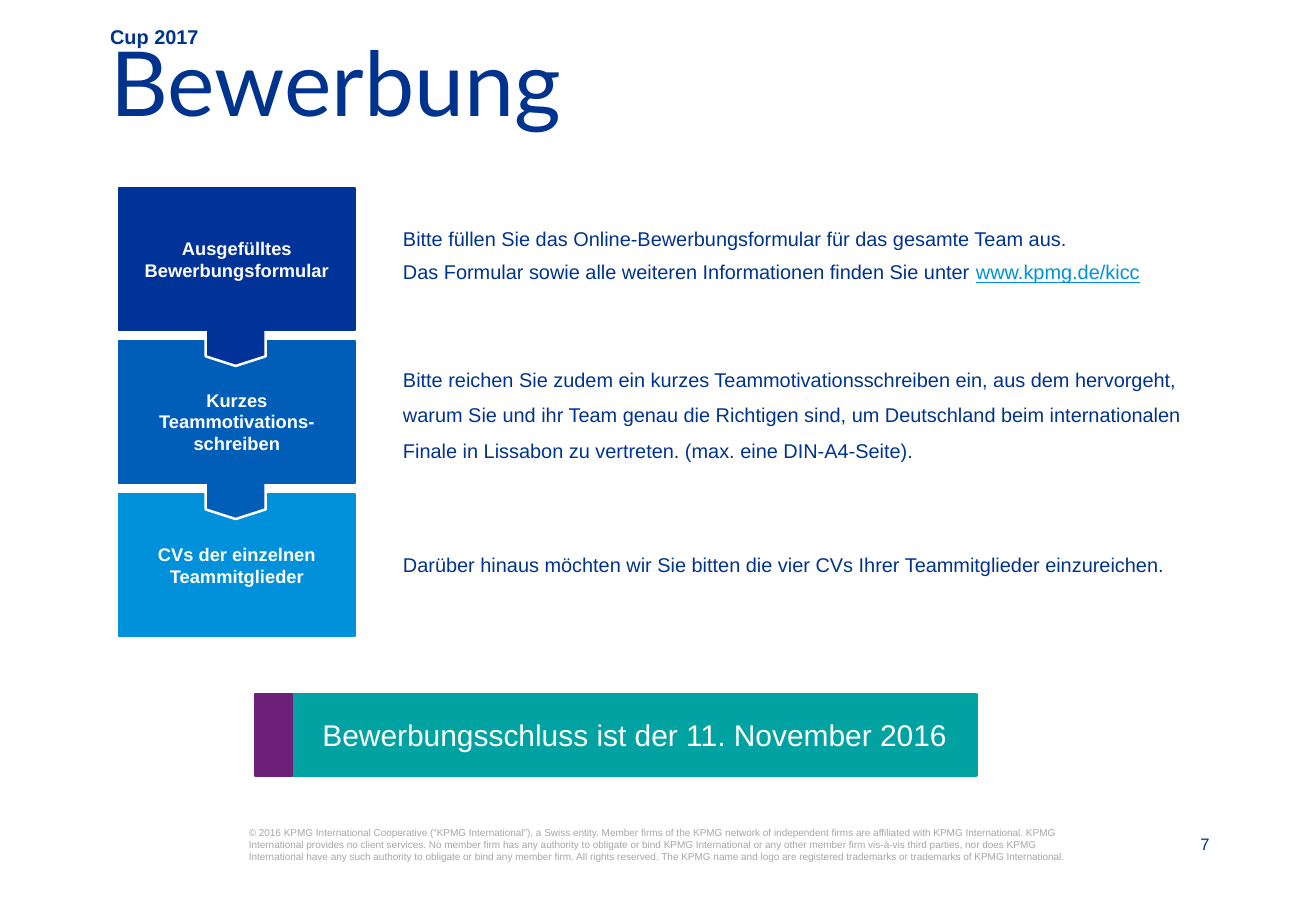
from pptx import Presentation
from pptx.dml.color import RGBColor
from pptx.enum import shapes, text
from pptx.util import Inches, Pt

NAVY, SKY, TEAL, PURPLE, GREY, WHITE = (
    "00338D", "0091DA", "00A3A1", "6D2077", "A6A6A6", "FFFFFF")
MIDDLE, BOTTOM = text.MSO_ANCHOR.MIDDLE, text.MSO_ANCHOR.BOTTOM
CENTER, RIGHT = text.PP_ALIGN.CENTER, text.PP_ALIGN.RIGHT

STEPS = [
    ("003397", ["Ausgefülltes", "Bewerbungsformular"], 0.05),
    ("005EB8", ["Kurzes Teammotivations-schreiben"], 0.21),
    (SKY, ["CVs der einzelnen Teammitglieder"], 0.05),
]
# Top of the box, line spacing, paragraphs
EXPLANATIONS = [
    (1.57, 0.85, [
        "Bitte füllen Sie das Online-Bewerbungsformular für das gesamte Team aus.",
        "Das Formular sowie alle weiteren Informationen finden Sie unter "]),
    (2.84, 1.5, [
        "Bitte reichen Sie zudem ein kurzes Teammotivationsschreiben ein, aus dem "
        "hervorgeht, warum Sie und ihr Team genau die Richtigen sind, um Deutschland "
        "beim internationalen Finale in Lissabon zu vertreten. (max. eine DIN-A4-Seite)."]),
    (4.16, 0.85, [
        "Darüber hinaus möchten wir Sie bitten die vier CVs Ihrer Teammitglieder "
        "einzureichen."]),
]
COPYRIGHT = (
    "© 2016 KPMG International Cooperative (“KPMG International”), a Swiss entity. "
    "Member firms of the KPMG network of independent firms are affiliated with KPMG "
    "International. KPMG International provides no client services. No member firm has "
    "any authority to obligate or bind KPMG International or any other member firm "
    "vis-à-vis third parties, nor does KPMG International have any such authority to "
    "obligate or bind any member firm. All rights reserved. The KPMG name and logo are "
    "registered trademarks or trademarks of KPMG International.")


def color(hex_value):
    return RGBColor.from_string(hex_value)


def paint(shape, fill, line, width):
    shape.shadow.inherit = False
    shape.fill.solid()
    shape.fill.fore_color.rgb = color(fill)
    shape.line.color.rgb = color(line)
    shape.line.width = Pt(width)


def write(frame, paragraphs, size, ink, font="Arial", bold=False, inset=None, **layout):
    """Fill a text frame; layout holds paragraph attributes and the anchor."""
    frame.word_wrap = True
    frame.vertical_anchor = layout.pop("anchor", text.MSO_ANCHOR.TOP)
    if inset is not None:
        for side in ("left", "top", "right", "bottom"):
            setattr(frame, f"margin_{side}", Inches(inset))
    gap = layout.pop("gap", 0)
    for index, words in enumerate(paragraphs):
        paragraph = frame.paragraphs[0] if index == 0 else frame.add_paragraph()
        if index:
            paragraph.space_before = Pt(gap)
        for name, value in layout.items():
            setattr(paragraph, name, value)
        run = paragraph.add_run()
        run.text = words
        formats = {"size": Pt(size), "name": font, "bold": bold}
        for name, value in formats.items():
            setattr(run.font, name, value)
        run.font.color.rgb = color(ink)


def add_text(slide, box, paragraphs, size, ink, **style):
    frame = slide.shapes.add_textbox(*map(Inches, box)).text_frame
    write(frame, paragraphs, size, ink, **style)
    return frame


def add_block(slide, box, fill, line_width):
    block = slide.shapes.add_shape(shapes.MSO_SHAPE.RECTANGLE, *map(Inches, box))
    paint(block, fill, fill, line_width)
    return block


def add_header(slide, left, top, width):
    add_text(slide, (left, top + 0.26, width, 0.57), ["Bewerbung"], 54, NAVY,
             font="Lato", inset=0, line_spacing=0.7)
    add_text(slide, (left, top, width, 0.2), ["Cup 2017"], 12, NAVY,
             bold=True, inset=0, anchor=BOTTOM)


def add_pointer(slide, center, top, fill):
    """Draw the downward tab that links a step to the next one."""
    half, shoulder, tip = 0.25, top + 0.23, top + 0.31
    outline = [(center + half, shoulder), (center + half, top),
               (center - half, top), (center - half, shoulder)]
    builder = slide.shapes.build_freeform(Inches(center), Inches(tip), scale=1.0)
    builder.add_line_segments([(Inches(x), Inches(y)) for x, y in outline], close=True)
    paint(builder.convert_to_shape(), fill, WHITE, 1.5)


def add_steps(slide, left, top, width, height, pitch):
    """Stack the steps from last to first, so each block covers its pointer's top."""
    for index in reversed(range(len(STEPS))):
        fill, label, top_inset = STEPS[index]
        y = top + index * pitch
        if index < len(STEPS) - 1:
            add_pointer(slide, left + width / 2 - 0.01, y + height - 0.01, fill)
        frame = add_block(slide, (left, y, width, height), fill, 1).text_frame
        write(frame, label, 11, WHITE, bold=True, anchor=MIDDLE, alignment=CENTER)
        frame.margin_top = Inches(top_inset)


def add_explanations(slide, left, width, height):
    frames = [add_text(slide, (left, top, width, height), paragraphs, 12, NAVY,
                       anchor=MIDDLE, line_spacing=spacing, gap=8)
              for top, spacing, paragraphs in EXPLANATIONS]
    address = frames[0].paragraphs[-1].add_run()
    address.text = "www.kpmg.de/kicc"
    for name, value in {"size": Pt(12), "name": "Arial", "underline": True}.items():
        setattr(address.font, name, value)
    address.font.color.rgb = color(SKY)


def add_deadline(slide, left, top, width, height):
    accent = 0.32
    banner = add_block(slide, (left + accent, top + 0.01, width - accent, height - 0.02),
                       TEAL, 2)
    write(banner.text_frame, ["Bewerbungsschluss ist der 11. November 2016"], 18, WHITE,
          anchor=MIDDLE, alignment=CENTER)
    add_block(slide, (left, top, accent - 0.01, height), PURPLE, 1)


def add_footer(slide, left, top, width, height):
    add_text(slide, (left, top, width, height), [COPYRIGHT], 6, GREY, inset=0)
    add_text(slide, (8.66, top + 0.07, 1.45, 0.16), ["7"], 10, NAVY,
             inset=0, anchor=BOTTOM, alignment=RIGHT)


def main():
    deck = Presentation()
    deck.slide_width, deck.slide_height = Inches(11), Inches(7.5)
    slide = deck.slides.add_slide(deck.slide_layouts[6])
    add_footer(slide, 2.08, 6.91, 7, 0.44)
    add_header(slide, 0.92, 0.21, 9.19)
    add_steps(slide, 0.99, 1.57, 1.98, 1.19, 1.28)
    add_explanations(slide, 3.27, 6.75, 1.16)
    add_deadline(slide, 2.13, 5.8, 6.03, 0.69)
    deck.save("out.pptx")


if __name__ == "__main__":
    main()
